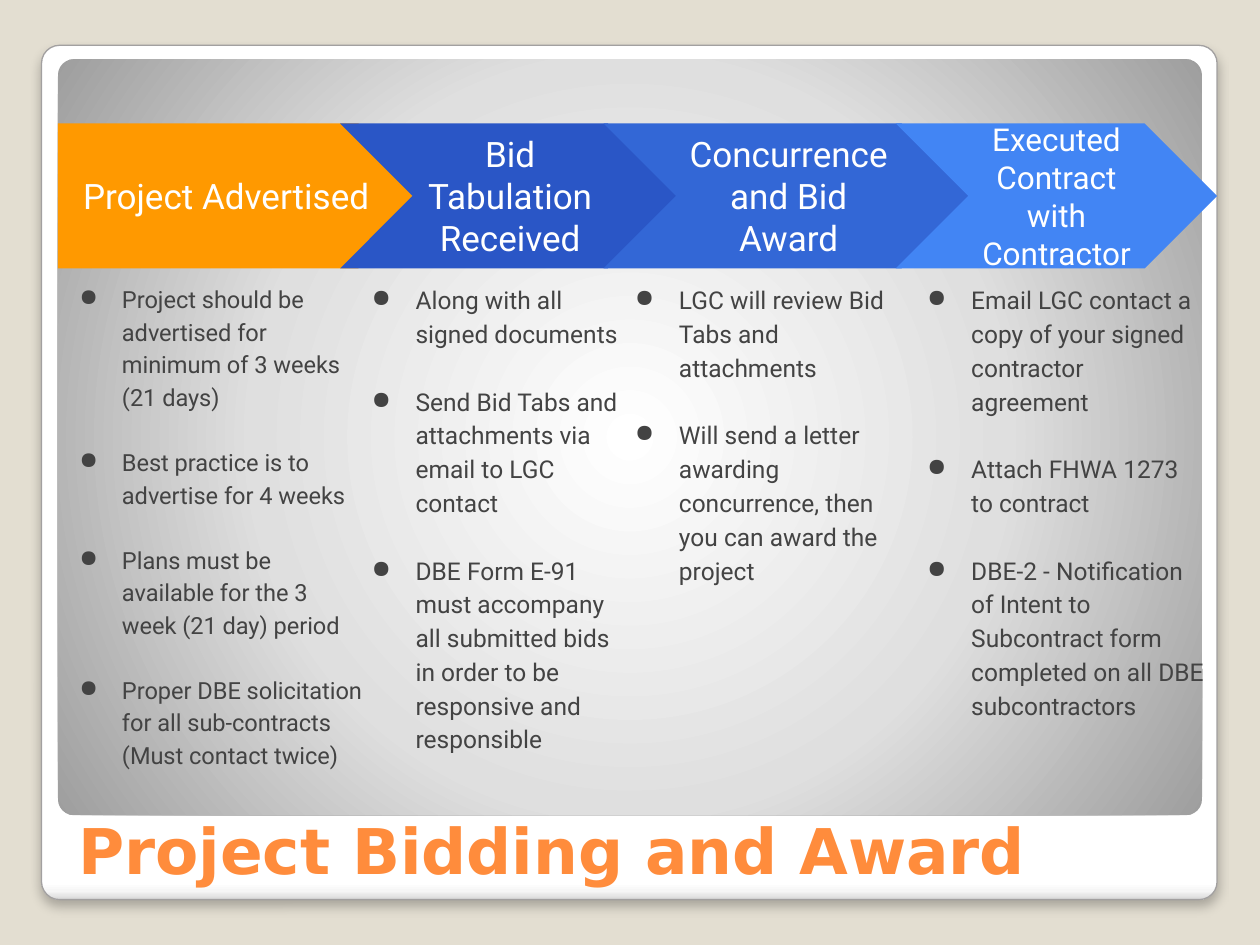
import pptx
import pptx.dml.color
import pptx.enum.shapes
import pptx.enum.text
import pptx.oxml
import pptx.oxml.ns
import pptx.util
from dataclasses import dataclass

TITLE = "Project Bidding and Award"
STAGES = [
    {
        "heading": "Project Advertised", "heading_size": 20, "color": "FF9900",
        "arrow": (0.46, 2.96), "notes": (0.37, 2.64, 4.26), "notes_size": 13.5,
        "points": [
            ["Project should be advertised for minimum of 3 weeks (21 days)"],
            ["Best practice is to advertise for 4 weeks"],
            ["Plans must be available for the 3 week (21 day) period"],
            ["Proper DBE solicitation for all sub-contracts", "(Must contact twice)"],
        ],
    },
    {
        "heading": "Bid Tabulation Received", "heading_size": 20, "color": "2A56C6",
        "arrow": (2.7, 2.7), "notes": (2.7, 2.35, 2.86), "notes_size": 14,
        "points": [
            ["Along with all signed documents"],
            ["Send Bid Tabs and attachments via email to LGC contact"],
            ["DBE Form E-91 must accompany all submitted bids in order to be "
             "responsive and responsible"],
        ],
    },
    {
        "heading": "Concurrence and Bid Award", "heading_size": 20, "color": "3367D6",
        "arrow": (4.79, 2.94), "notes": (4.79, 2.59, 2.88), "notes_size": 14,
        "points": [
            ["LGC will review Bid Tabs and attachments"],
            ["Will send a letter awarding concurrence, then you can award the project"],
        ],
    },
    {
        "heading": "Executed Contract with Contractor", "heading_size": 18, "color": "4285F4",
        "arrow": (7.11, 2.55), "notes": (7.11, 2.55, 2.86), "notes_size": 14,
        "points": [
            ["Email LGC contact a copy of your signed contractor agreement"],
            ["Attach FHWA 1273 to contract"],
            ["DBE-2 - Notification of Intent to Subcontract form completed on all "
             "DBE subcontractors"],
        ],
    },
]


@dataclass(frozen=True)
class Theme:
    background: str = "E3DED1"
    frame_line: str = "A2A0A0"
    title: str = "FF8C3C"
    heading: str = "FFFFFF"
    notes: str = "434343"
    title_font: str = "DejaVu Sans"
    body_font: str = "Roboto"
    title_size: float = 36
    line_spacing: float = 1.15
    blank_line: float = 1.38
    frame_stops: tuple = ((0, "FFFFFF"), (98, "FFFFFF"), (99, "F6F6F6"), (100, "D8D8D8"))
    panel_stops: tuple = ((0, "FFFFFF"), (55, "DFDFDF"), (100, "9E9E9E"))


THEME = Theme()
ARROW_TOP, ARROW_HEIGHT = 0.98, 1.15
NOTES_TOP = ARROW_TOP + ARROW_HEIGHT
INDENT = 0.5
SHAPES = pptx.enum.shapes.MSO_SHAPE
ANCHOR = pptx.enum.text.MSO_ANCHOR
ALIGN = pptx.enum.text.PP_ALIGN
NS = pptx.oxml.ns.nsdecls("a")
LINEAR = '<a:lin ang="5400000" scaled="0"/>'
RADIAL = ('<a:path path="circle"><a:fillToRect l="50000" t="50000" '
          'r="50000" b="50000"/></a:path>')


def rgb(color):
    return pptx.dml.color.RGBColor.from_string(color)


def inches(*values):
    return [pptx.util.Inches(value) for value in values]


def style(paragraph, font_name, size, color, bold=False):
    font = paragraph.font
    font.name, font.size, font.bold = font_name, pptx.util.Pt(size), bold
    font.color.rgb = rgb(color)


def set_frame(frame, anchor, side, vertical):
    frame.word_wrap = True
    frame.auto_size = pptx.enum.text.MSO_AUTO_SIZE.NONE
    frame.vertical_anchor = anchor
    frame.margin_left = frame.margin_right = pptx.util.Inches(side)
    frame.margin_top = frame.margin_bottom = pptx.util.Inches(vertical)


def add_filled(shapes, kind, box, color):
    shape = shapes.add_shape(kind, *inches(*box))
    shape.shadow.inherit = False
    shape.fill.solid()
    shape.fill.fore_color.rgb = rgb(color)
    shape.line.fill.background()
    return shape


def add_panel(shapes, box, stops, direction):
    panel = add_filled(shapes, SHAPES.ROUNDED_RECTANGLE, box, stops[0][1])
    panel.adjustments[0] = 0.021
    listed = "".join(f'<a:gs pos="{share * 1000}"><a:srgbClr val="{color}"/></a:gs>'
                     for share, color in stops)
    gradient = pptx.oxml.parse_xml(
        f'<a:gradFill {NS} rotWithShape="1"><a:gsLst>{listed}</a:gsLst>{direction}</a:gradFill>')
    properties = panel._element.spPr
    properties.replace(properties.find(pptx.oxml.ns.qn("a:solidFill")), gradient)
    return panel


def add_frame_edge(frame):
    frame.line.color.rgb = rgb(THEME.frame_line)
    frame.line.width = pptx.util.Pt(0.75)
    effects = frame._element.spPr.find(pptx.oxml.ns.qn("a:effectLst"))
    effects.append(pptx.oxml.parse_xml(
        f'<a:outerShdw {NS} blurRad="76200" dist="50800" dir="5400000" rotWithShape="0">'
        '<a:srgbClr val="000000"><a:alpha val="25000"/></a:srgbClr></a:outerShdw>'))


def set_indent(paragraph, hanging, bulleted):
    properties = paragraph._p.get_or_add_pPr()
    properties.set("marL", str(pptx.util.Inches(INDENT)))
    properties.set("indent", str(-pptx.util.Inches(hanging) if bulleted else 0))
    if bulleted:
        for bullet in (f'<a:buClr {NS}><a:srgbClr val="{THEME.notes}"/></a:buClr>',
                       f'<a:buChar {NS} char="●"/>'):
            properties.append(pptx.oxml.parse_xml(bullet))


def add_heading(shapes, stage, kind):
    left, width = stage["arrow"]
    arrow = add_filled(shapes, kind, (left, ARROW_TOP, width, ARROW_HEIGHT), stage["color"])
    set_frame(arrow.text_frame, ANCHOR.MIDDLE, 0.1, 0.1)
    heading = arrow.text_frame.paragraphs[0]
    heading.text = stage["heading"]
    heading.alignment = ALIGN.CENTER
    style(heading, THEME.body_font, stage["heading_size"], THEME.heading)


def add_notes(shapes, stage):
    left, width, height = stage["notes"]
    size = stage["notes_size"]
    frame = shapes.add_textbox(*inches(left, NOTES_TOP, width, height)).text_frame
    set_frame(frame, ANCHOR.TOP, 0.1, 0.1)
    for point_number, point in enumerate(stage["points"]):
        for line_number, line in enumerate(point):
            first = point_number == line_number == 0
            paragraph = frame.paragraphs[0] if first else frame.add_paragraph()
            paragraph.text = line
            paragraph.line_spacing = THEME.line_spacing
            if point_number and not line_number:
                paragraph.space_before = pptx.util.Pt(round(size * THEME.blank_line, 1))
            set_indent(paragraph, size / 40, line_number == 0)
            style(paragraph, THEME.body_font, size, THEME.notes)


def main():
    deck = pptx.Presentation()
    deck.slide_width, deck.slide_height = inches(10, 7.5)
    slide = deck.slides.add_slide(deck.slide_layouts[5])
    slide.background.fill.solid()
    slide.background.fill.fore_color.rgb = rgb(THEME.background)

    frame = add_panel(slide.shapes, (0.33, 0.36, 9.33, 6.78), THEME.frame_stops, LINEAR)
    add_frame_edge(frame)
    panel = add_panel(slide.shapes, (0.46, 0.47, 9.08, 6), THEME.panel_stops, RADIAL)

    title = slide.shapes.title
    panel._element.addnext(title._element)
    title.left, title.top, title.width, title.height = inches(0.52, 5.94, 8.95, 1.15)
    set_frame(title.text_frame, ANCHOR.BOTTOM, 0.1, 0.05)
    title.text_frame.text = TITLE
    title_line = title.text_frame.paragraphs[0]
    title_line.alignment = ALIGN.LEFT
    style(title_line, THEME.title_font, THEME.title_size, THEME.title, bold=True)

    for number, stage in enumerate(STAGES):
        group = slide.shapes.add_group_shape().shapes
        add_heading(group, stage, SHAPES.CHEVRON if number else SHAPES.PENTAGON)
        add_notes(group, stage)

    deck.save("out.pptx")


if __name__ == "__main__":
    main()
